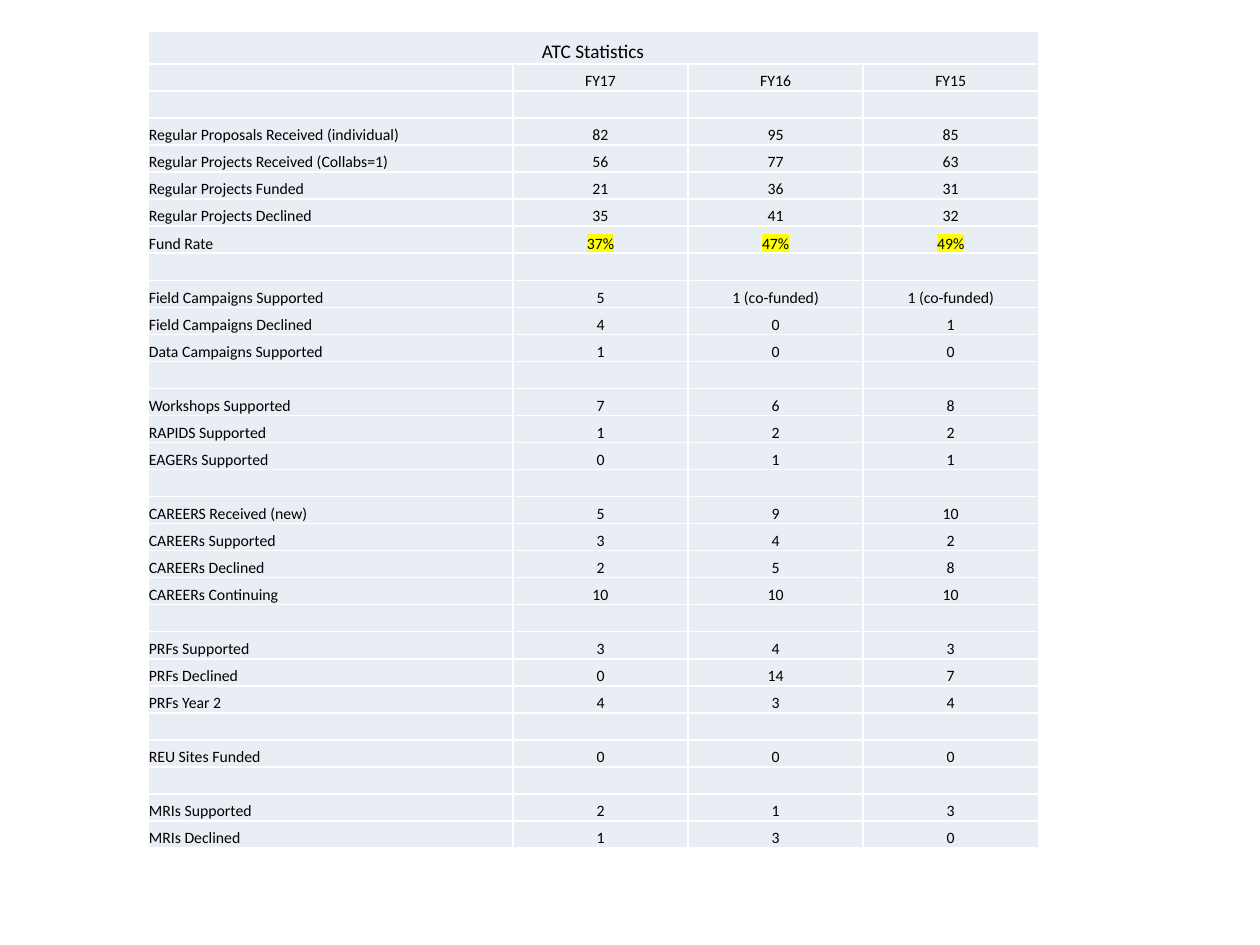
from dataclasses import dataclass

from lxml.etree import SubElement as Sub
from pptx import Presentation
from pptx.dml.color import RGBColor as Rgb
from pptx.enum.text import MSO_ANCHOR as Anchor, PP_ALIGN as Align
from pptx.oxml import parse_xml
from pptx.oxml.ns import nsdecls, qn
from pptx.util import Cm, Pt


@dataclass(frozen=True)
class Theme:
    font: str = "Calibri"
    ink: str = "000000"
    cell: str = "E9EDF4"
    rule: str = "FFFFFF"
    marker: str = "FFFF00"
    title_size: int = 11
    body_size: int = 9
    rule_width: int = 1


TITLE = "ATC Statistics"
YEARS = ("", "FY17", "FY16", "FY15")
GROUPS = [
    [
        ("Regular Proposals Received (individual)", "82", "95", "85"),
        ("Regular Projects Received (Collabs=1)", "56", "77", "63"),
        ("Regular Projects Funded", "21", "36", "31"),
        ("Regular Projects Declined", "35", "41", "32"),
        ("Fund Rate", "37%", "47%", "49%"),
    ],
    [
        ("Field Campaigns Supported", "5", "1 (co-funded)", "1 (co-funded)"),
        ("Field Campaigns Declined", "4", "0", "1"),
        ("Data Campaigns Supported", "1", "0", "0"),
    ],
    [
        ("Workshops Supported", "7", "6", "8"),
        ("RAPIDS Supported", "1", "2", "2"),
        ("EAGERs Supported", "0", "1", "1"),
    ],
    [
        ("CAREERS Received (new)", "5", "9", "10"),
        ("CAREERs Supported", "3", "4", "2"),
        ("CAREERs Declined", "2", "5", "8"),
        ("CAREERs Continuing", "10", "10", "10"),
    ],
    [
        ("PRFs Supported", "3", "4", "3"),
        ("PRFs Declined", "0", "14", "7"),
        ("PRFs Year 2", "4", "3", "4"),
    ],
    [("REU Sites Funded", "0", "0", "0")],
    [
        ("MRIs Supported", "2", "1", "3"),
        ("MRIs Declined", "1", "3", "0"),
    ],
]


class StatisticsSlide:
    def __init__(self, deck, theme):
        self.theme = theme
        self.slide = deck.slides.add_slide(deck.slide_layouts[6])

    def table(self, rows, left, top, widths, title_height, height):
        frame = self.slide.shapes.add_table(
            len(rows), len(widths), Cm(left), Cm(top), Cm(sum(widths)), Cm(height)
        )
        table = frame.table
        table.first_row = table.horz_banding = False
        for column, width in zip(table.columns, widths):
            column.width = Cm(width)
        body_height = (height - title_height) / (len(rows) - 1)
        for index, row in enumerate(table.rows):
            row.height = Cm(body_height if index else title_height)
        table.cell(0, 0).merge(table.cell(0, len(widths) - 1))
        for row_index, texts in enumerate(rows):
            size = self.theme.body_size if row_index else self.theme.title_size
            for column_index, text in enumerate(texts):
                is_label = row_index and not column_index
                align = Align.LEFT if is_label else Align.CENTER
                self.cell(table.cell(row_index, column_index), text, size, align)

    def cell(self, cell, text, size, align):
        cell.margin_left = cell.margin_right = cell.margin_top = Cm(0.02)
        cell.margin_bottom = 0
        cell.vertical_anchor = Anchor.BOTTOM
        cell.fill.solid()
        cell.fill.fore_color.rgb = Rgb.from_string(self.theme.cell)
        self.borders(cell)
        para = cell.text_frame.paragraphs[0]
        para.alignment = align
        if text:
            self.span(para, text, size)
        else:
            Sub(para._p, qn("a:endParaRPr"), sz=str(size * 100))

    def borders(self, cell):
        properties = cell._tc.get_or_add_tcPr()
        for index, side in enumerate(("lnL", "lnR", "lnT", "lnB")):
            line = parse_xml(
                f'<a:{side} {nsdecls("a")} w="{Pt(self.theme.rule_width)}">'
                f'<a:solidFill><a:srgbClr val="{self.theme.rule}"/></a:solidFill>'
                f"</a:{side}>"
            )
            properties.insert(index, line)

    def span(self, para, text, size):
        span = para.add_run()
        span.text = text
        span.font.name = self.theme.font
        span.font.size = Pt(size)
        span.font.bold = False
        span.font.color.rgb = Rgb.from_string(self.theme.ink)
        if text.endswith("%"):
            highlight = parse_xml(
                f'<a:highlight {nsdecls("a")}>'
                f'<a:srgbClr val="{self.theme.marker}"/></a:highlight>'
            )
            span.font._element.find(qn("a:solidFill")).addnext(highlight)


def main():
    deck = Presentation()
    deck.slide_width, deck.slide_height = Cm(25.4), Cm(19.05)
    rows = [(TITLE, "", "", ""), YEARS]
    for group in GROUPS:
        rows += [("",) * len(YEARS), *group]
    page = StatisticsSlide(deck, Theme())
    page.table(
        rows,
        left=2.98,
        top=0.64,
        widths=(7.36, 3.53, 3.53, 3.53),
        title_height=0.65,
        height=16.47,
    )
    deck.save("out.pptx")


if __name__ == "__main__":
    main()
